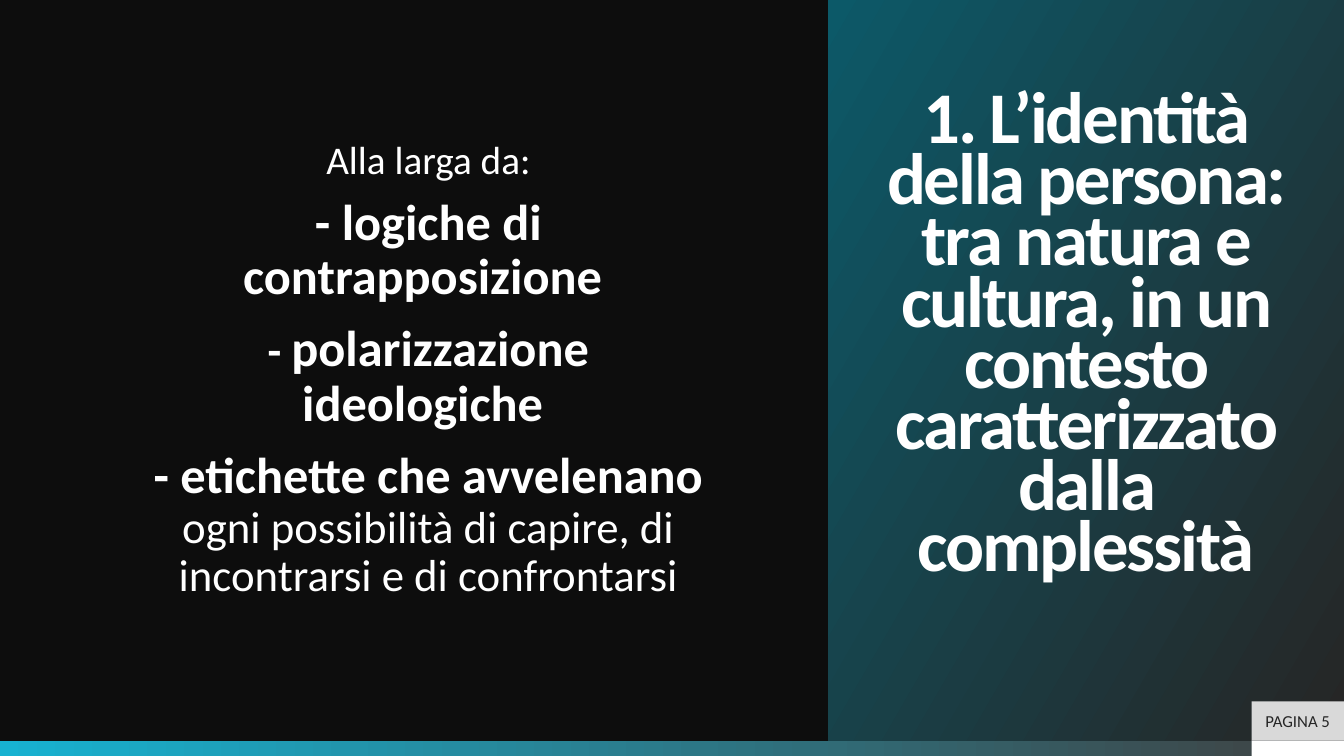
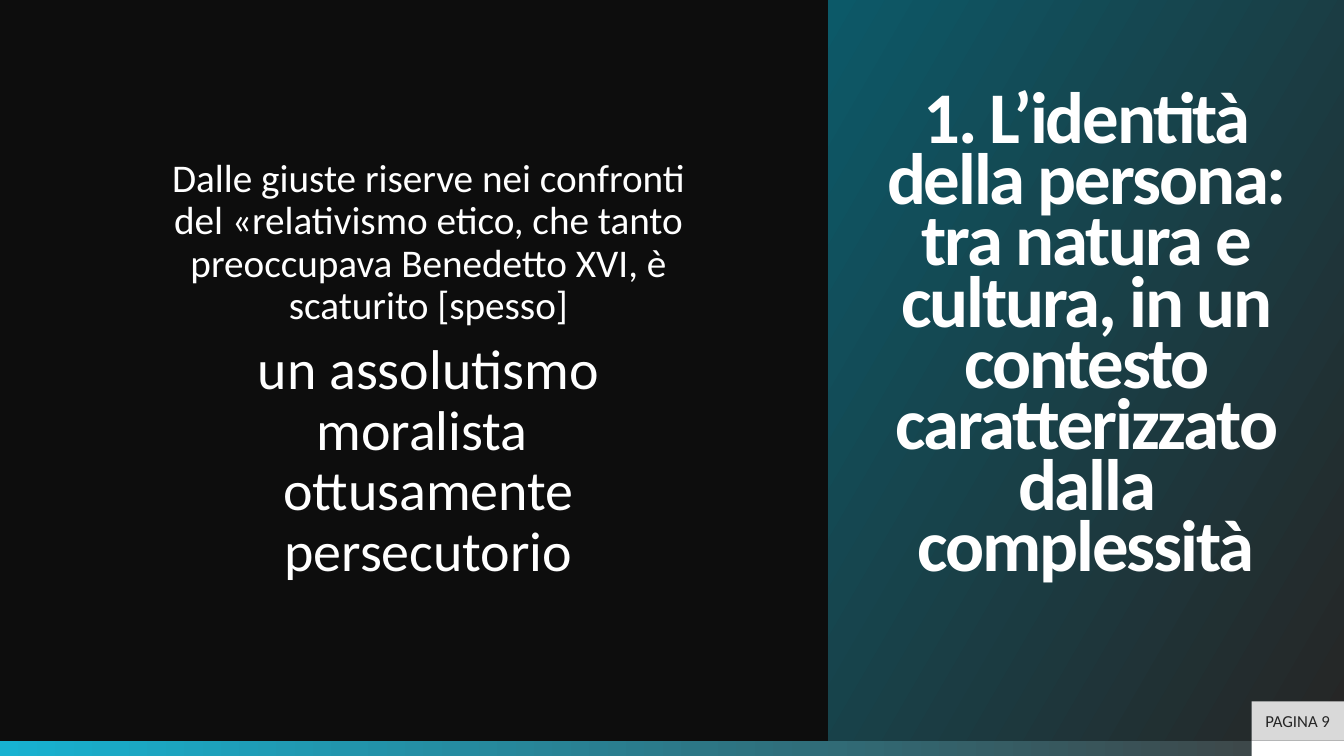
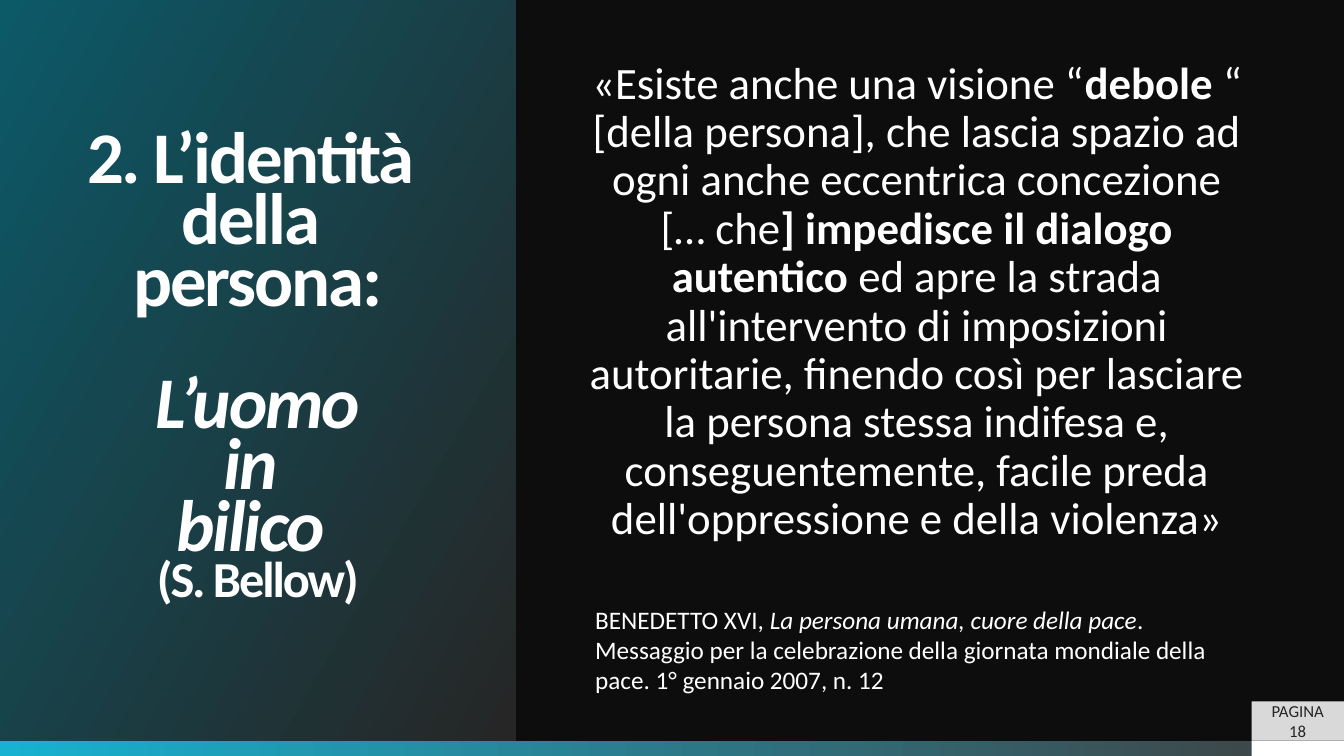
from pptx import Presentation
from pptx.dml.color import RGBColor
from pptx.enum.shapes import MSO_SHAPE as SHAPE
from pptx.enum.text import MSO_ANCHOR as ANCHOR, MSO_AUTO_SIZE as AUTO, PP_ALIGN as ALIGN
from pptx.util import Pt

COLORS = {
    "background": "0D0D0D",
    "text": "FFFFFF",
    "dark": "262626",
    "teal": "0C5968",
    "cyan": "17B2D1",
    "grey": "404040",
    "page": "D9D9D9",
}
FONT = "Calibri"
WIDTH, HEIGHT = 960, 540
BAR_TOP = 529
PAGE_LEFT, PAGE_TOP = 894, 501


def rgb(name):
    return RGBColor.from_string(COLORS[name])


class Deck:
    """Hold the shared style and the current slide."""

    def __init__(self):
        self.prs = Presentation()
        self.prs.slide_width, self.prs.slide_height = Pt(WIDTH), Pt(HEIGHT)
        self.fill(self.prs.slide_master.background, "background")

    def fill(self, target, color):
        target.fill.solid()
        target.fill.fore_color.rgb = rgb(color)

    def gradient(self, target, first, last, angle, start=0):
        target.fill.gradient()
        target.fill.gradient_angle = angle
        stops = target.fill.gradient_stops
        for stop, color, position in zip(stops, (first, last), (start, 1)):
            stop.color.rgb = rgb(color)
            stop.position = position

    def rect(self, left, top, width, height):
        sp = self.s.shapes.add_shape(SHAPE.RECTANGLE, Pt(left), Pt(top), Pt(width), Pt(height))
        sp.shadow.inherit = False
        sp.line.fill.background()
        return sp

    def frame(self, sp, side=7.2, top=3.6, bottom=3.6, anchor=ANCHOR.MIDDLE):
        tf = sp.text_frame
        tf.word_wrap = True
        tf.auto_size = AUTO.NONE
        tf.vertical_anchor = anchor
        tf.margin_left = tf.margin_right = Pt(side)
        tf.margin_top, tf.margin_bottom = Pt(top), Pt(bottom)
        return tf

    def paragraph(self, tf, index, runs, size, color="text", align=ALIGN.CENTER, spacing=None, tracking=None):
        p = tf.add_paragraph() if index else tf.paragraphs[0]
        p.alignment = align
        if spacing:
            p.line_spacing = spacing
        p.font.name, p.font.size = FONT, Pt(size)
        p.font.color.rgb = rgb(color)
        for text, style in runs:
            for n, line in enumerate(text.split("\n")):
                if n:
                    p.add_line_break()
                if not line:
                    continue
                r = p.add_run()
                r.text = line
                r.font.bold = "b" in style
                r.font.italic = "i" in style
                if "size" in style:
                    r.font.size = Pt(style["size"])
                if tracking:
                    r.font._element.set("spc", str(tracking))
        return p

    def slide(self, page):
        self.s = self.prs.slides.add_slide(self.prs.slide_layouts[5])
        self.gradient(self.rect(0, BAR_TOP, WIDTH, HEIGHT - BAR_TOP), "cyan", "grey", 0)
        self.fill(self.rect(PAGE_LEFT, BAR_TOP, WIDTH - PAGE_LEFT, HEIGHT - BAR_TOP), "text")
        label = self.rect(PAGE_LEFT, PAGE_TOP, WIDTH - PAGE_LEFT, BAR_TOP - PAGE_TOP)
        self.fill(label, "page")
        self.paragraph(self.frame(label), 0, [(f"PAGINA {page}", {})], 12, "dark")

    def title(self, left, paragraphs, bottom=3.6):
        sp = self.s.shapes.title
        width = WIDTH - left if left else 368.5
        sp.left, sp.top, sp.width, sp.height = Pt(left), Pt(0), Pt(width), Pt(BAR_TOP)
        self.gradient(sp, "dark", "teal", 150, 0.01)
        tf = self.frame(sp, 31, bottom=bottom)
        for i, runs in enumerate(paragraphs):
            p = self.paragraph(tf, i, runs, 52, spacing=0.7, tracking=-150)
            if i:
                p.space_before = Pt(44)

    def text_box(self, left, top, width, height):
        return self.s.shapes.add_textbox(Pt(left), Pt(top), Pt(width), Pt(height))

    def body(self, box, side, paragraphs):
        tf = self.frame(self.text_box(*box), side, 0, 0)
        for i, (size, runs) in enumerate(paragraphs):
            p = self.paragraph(tf, i, runs, size, spacing=0.9)
            p.space_after = Pt(round(size * 0.35, 1))

    def citation(self, box, runs):
        tf = self.frame(self.text_box(*box), anchor=ANCHOR.TOP)
        self.paragraph(tf, 0, runs, 18, align=ALIGN.LEFT)


BOLD = {"b": True}
COMPLEXITY = "1. L’identità della persona: tra natura e cultura, in un contesto caratterizzato dalla complessità"
COMPLEXITY_SLIDES = {
    5: [
        (28, [("Alla larga da:", {})]),
        (36, [("- logiche di contrapposizione ", BOLD)]),
        (36, [("- ", {"b": True, "size": 32}), ("polarizzazione ideologiche ", BOLD)]),
        (36, [
            ("- etichette che avvelenano ", BOLD),
            ("ogni possibilità di capire, di incontrarsi e di confrontarsi", {"size": 32}),
        ]),
    ],
    9: [
        (28, [(
            "Dalle giuste riserve nei confronti del «relativismo etico, che tanto "
            "preoccupava Benedetto XVI, è scaturito [spesso]", {})]),
        (40, [("un assolutismo moralista \nottusamente persecutorio", {})]),
    ],
}


def main():
    deck = Deck()
    for page, paragraphs in COMPLEXITY_SLIDES.items():
        deck.slide(page)
        deck.title(591.5, [[(COMPLEXITY, BOLD)]], bottom=48)
        deck.body((96, 78, 420, 374), 13, paragraphs)

    deck.slide(18)
    deck.title(0, [
        [("2. L’identità \ndella \npersona:", BOLD)],
        [("L’uomo\nin \nbilico \n", {"b": True, "i": True}), ("(S. Bellow)", {"b": True, "size": 36})],
    ])
    deck.body((406, 55, 498, 322), 15, [(32, [
        ("«Esiste anche una visione “", {}),
        ("debole", BOLD),
        (" “ [della persona], che lascia spazio ad ogni anche eccentrica concezione [… che", {}),
        ("] impedisce il dialogo autentico ", BOLD),
        ("ed apre la strada all'intervento di imposizioni autoritarie, finendo così per lasciare "
         "la persona stessa indifesa e, conseguentemente, facile preda dell'oppressione e della violenza»", {}),
    ])])
    deck.citation((418, 428, 480, 73), [
        ("BENEDETTO XVI, ", {}),
        ("La persona umana, cuore della pace", {"i": True}),
        (". Messaggio per la celebrazione della giornata mondiale della pace. 1° gennaio 2007, n. 12", {}),
    ])
    deck.prs.save("out.pptx")


if __name__ == "__main__":
    main()
